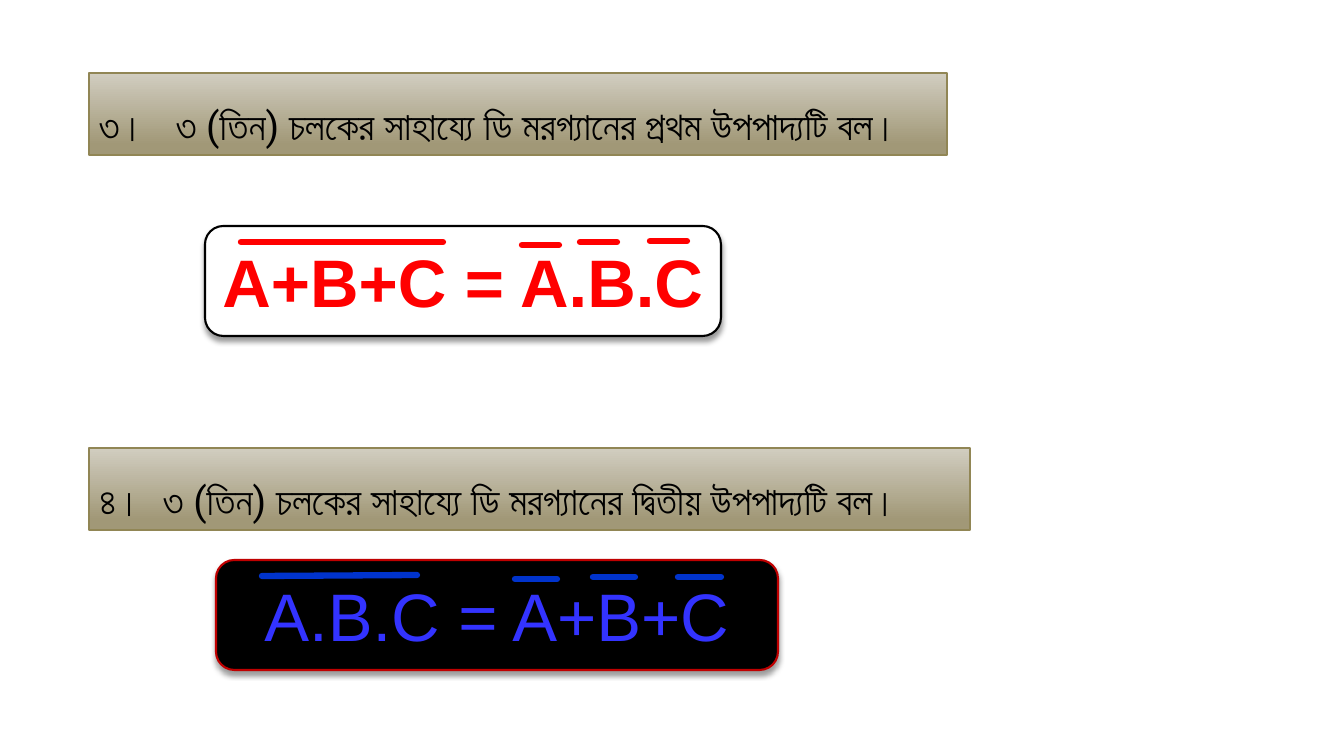
from lxml.etree import SubElement
from pptx import Presentation
from pptx.dml.color import RGBColor
from pptx.enum.shapes import MSO_CONNECTOR, MSO_SHAPE
from pptx.enum.text import MSO_ANCHOR, MSO_AUTO_SIZE, PP_ALIGN
from pptx.oxml.ns import qn
from pptx.util import Pt

PX = 914400 / 100.8

BLACK = RGBColor(0x00, 0x00, 0x00)
WHITE = RGBColor(0xFF, 0xFF, 0xFF)
RED = RGBColor(0xFF, 0x00, 0x00)
DARK_RED = RGBColor(0xC0, 0x00, 0x00)
VIOLET = RGBColor(0x33, 0x33, 0xFF)
BLUE = RGBColor(0x00, 0x33, 0xCC)
SAND = RGBColor(0xD1, 0xCD, 0xC0)
KHAKI = RGBColor(0xA1, 0x98, 0x77)
OLIVE = RGBColor(0x91, 0x86, 0x55)


def px(length):
    return round(length * PX)


def add_soft_shadow(shape):
    effects = SubElement(shape._element.spPr, qn("a:effectLst"))
    shadow = SubElement(effects, qn("a:outerShdw"), blurRad=str(Pt(4)),
                        dist=str(Pt(3)), dir="5400000", rotWithShape="0")
    color = SubElement(shadow, qn("a:srgbClr"), val=str(BLACK))
    SubElement(color, qn("a:alpha"), val="40000")


def add_question(slide, box, number, question, indent):
    """Gradient banner with a number and a question indented after it."""
    banner = slide.shapes.add_shape(MSO_SHAPE.RECTANGLE, *map(px, box))
    banner.shadow.inherit = False
    banner.fill.gradient()
    banner.fill.gradient_angle = 270
    stops = banner.fill.gradient_stops
    for stop, color, position in zip(stops, (SAND, KHAKI), (0, 0.88)):
        stop.color.rgb = color
        stop.position = position
    banner.line.color.rgb = OLIVE
    banner.line.width = Pt(1)

    frame = banner.text_frame
    frame.word_wrap = True
    frame.auto_size = MSO_AUTO_SIZE.SHAPE_TO_FIT_TEXT
    frame.vertical_anchor = MSO_ANCHOR.TOP
    paragraph = frame.paragraphs[0]
    paragraph.alignment = PP_ALIGN.LEFT
    paragraph.line_spacing = 1.5
    properties = paragraph._p.get_or_add_pPr()
    properties.set("marL", str(px(indent)))
    properties.set("indent", str(-px(indent)))
    tabs = SubElement(properties, qn("a:tabLst"))
    SubElement(tabs, qn("a:tab"), pos=str(px(indent)), algn="l")

    run = paragraph.add_run()
    run.text = f"{number}\t{question}"
    run.font.size = Pt(28)
    run.font.name = "Roboto"
    run.font.color.rgb = BLACK
    SubElement(run._r.get_or_add_rPr(), qn("a:cs"), typeface="Roboto")


def add_formula(slide, box, formula, bold, fill, border, ink, bar_color, bars):
    """Rounded card with a formula; bars (x1, y1, x2, y2) start at its corner."""
    left, top, _, _ = box
    group = slide.shapes.add_group_shape()
    card = group.shapes.add_shape(MSO_SHAPE.FLOWCHART_ALTERNATE_PROCESS,
                                  *map(px, box))
    card.fill.solid()
    card.fill.fore_color.rgb = fill
    card.line.color.rgb = border
    card.line.width = Pt(1.5)
    add_soft_shadow(card)

    frame = card.text_frame
    frame.word_wrap = True
    frame.vertical_anchor = MSO_ANCHOR.MIDDLE
    paragraph = frame.paragraphs[0]
    paragraph.alignment = PP_ALIGN.CENTER
    run = paragraph.add_run()
    run.text = formula
    run.font.size = Pt(48)
    run.font.name = "Arial"
    run.font.bold = bold
    run.font.color.rgb = ink

    # Negation bars above the letters
    for x1, y1, x2, y2 in bars:
        bar = group.shapes.add_connector(
            MSO_CONNECTOR.STRAIGHT,
            px(left + x1), px(top + y1), px(left + x2), px(top + y2))
        bar.line.color.rgb = bar_color
        bar.line.width = Pt(4.5)
        bar.line._get_or_add_ln().set("cap", "rnd")
        SubElement(bar._element.spPr, qn("a:effectLst"))


def main():
    prs = Presentation()
    prs.slide_width = px(1344)
    prs.slide_height = px(756)
    slide = prs.slides.add_slide(prs.slide_layouts[6])

    # First theorem
    add_question(slide, (89, 73, 858, 82), "৩।",
                 "৩ (তিন) চলকের সাহায্যে ডি মরগ্যানের প্রথম উপপাদ্যটি বল।", 77)
    add_formula(slide, (205, 226, 516, 110), "A+B+C = A.B.C", True,
                WHITE, BLACK, RED, RED,
                [(36, 16, 238, 16), (317, 19, 354, 19),
                 (375, 16, 412, 16), (445, 15, 482, 15)])

    # Second theorem
    add_question(slide, (89, 448, 881, 82), "৪।",
                 "৩ (তিন) চলকের সাহায্যে ডি মরগ্যানের দ্বিতীয় উপপাদ্যটি বল।", 64)
    add_formula(slide, (216, 560, 562, 110), "A.B.C = A+B+C", False,
                BLACK, DARK_RED, VIOLET, BLUE,
                [(46, 16, 201, 15), (299, 19, 341, 19),
                 (377, 17, 419, 17), (462, 17, 505, 17)])

    prs.save("out.pptx")


if __name__ == "__main__":
    main()
